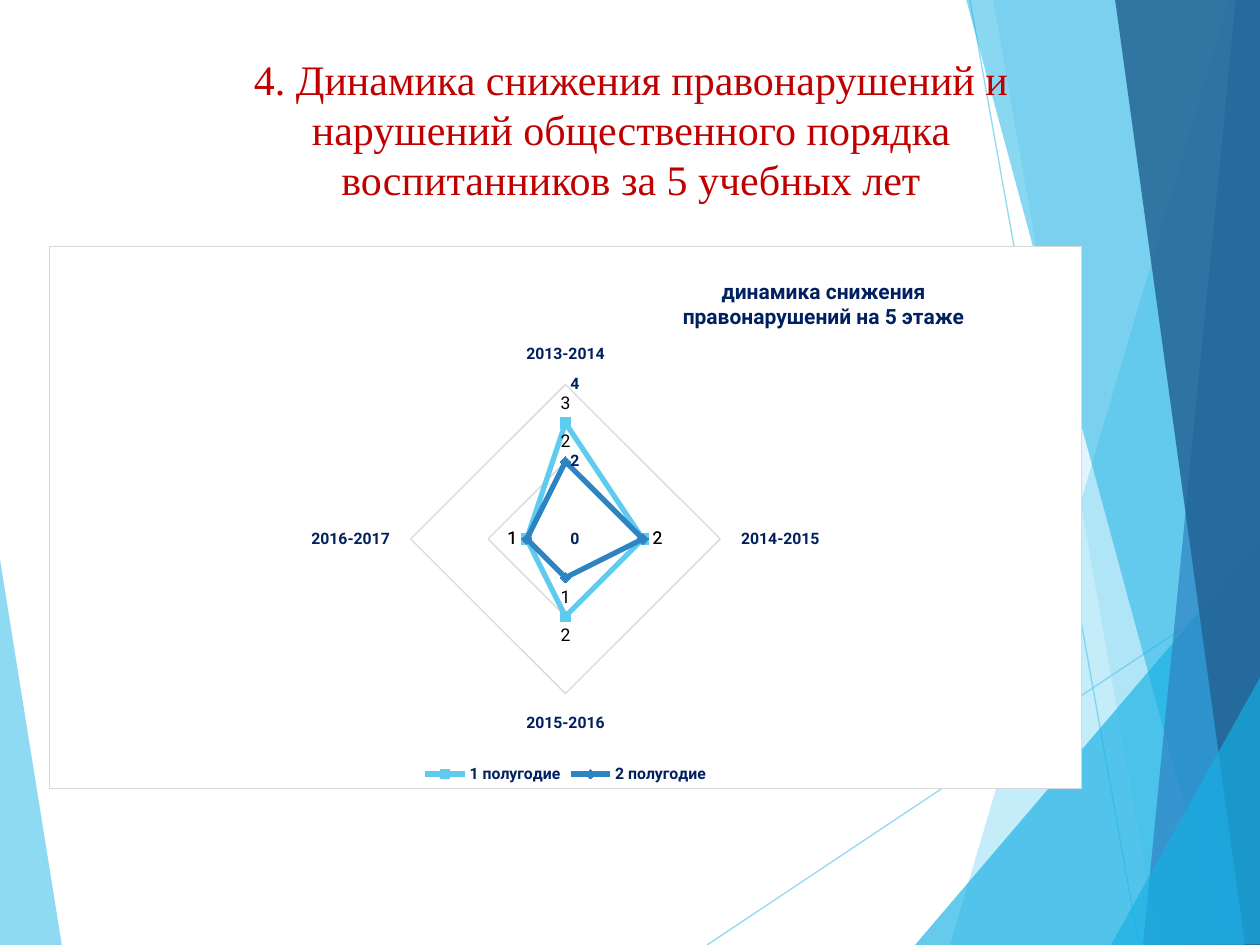
from pptx import Presentation, util as u
from pptx.chart.data import CategoryChartData
from pptx.dml.color import RGBColor
from pptx.enum import chart as ch, shapes, text
from pptx.oxml import parse_xml
from pptx.oxml.ns import nsdecls, qn
from lxml import etree

PX = u.Inches(1) / 126
THEME = dict(
    sky="5FCBEF", cyan="17B0E4", blue="2E83C3", deep="226292",
    red="C00000", navy="002060", black="000000", grid="D9D9D9",
    title_font="Times New Roman", chart_font="Roboto",
    title=24, chart_title=12, label=10, axis=9,
)


def set_font(font, face, size, color, bold=False):
    font.name, font.size, font.bold = face, u.Pt(THEME[size]), bold
    font.color.rgb = RGBColor.from_string(THEME[color])


def set_alpha(sp, percent):
    for clr in sp._element.spPr.iter(qn("a:srgbClr")):
        etree.SubElement(clr, qn("a:alpha")).set("val", str(percent * 1000))


prs = Presentation()
prs.slide_width, prs.slide_height = u.Inches(10), u.Inches(7.5)
s = prs.slides.add_slide(prs.slide_layouts[5])

# Background facets and hairlines, from back to front: colour, opacity, points
facets = [
    ("sky", 70, [(-1, 553), (62, 946), (-1, 945)]),
    ("sky", 70, [(707, 945), (1261, 576)]),
    ("sky", 70, [(970, 0), (1139, 945)]),
    ("sky", 36, [(1229, 0), (950, 945), (1262, 946), (1261, 1)]),
    ("sky", 20, [(993, -1), (1158, 945), (1261, 945), (1261, -1)]),
    ("cyan", 66, [(915, 945), (1260, 541), (1261, 945)]),
    ("cyan", 50, [(966, -1), (1222, 945), (1261, 944), (1261, -1)]),
    ("blue", 70, [(1236, -1), (1143, 945), (1261, 945), (1260, -1)]),
    ("deep", 82, [(1115, -1), (1245, 945), (1262, 945), (1260, -1)]),
    ("cyan", 66, [(1111, 945), (1262, 674), (1262, 944)]),
]
for color, opacity, points in facets:
    rgb = RGBColor.from_string(THEME[color])
    if len(points) == 2:
        ends = [round(v * PX) for point in points for v in point]
        sp = s.shapes.add_connector(shapes.MSO_CONNECTOR.STRAIGHT, *ends)
        sp.line.color.rgb, sp.line.width = rgb, u.Pt(0.75)
        etree.SubElement(sp._element.spPr, qn("a:effectLst"))
    else:
        fb = s.shapes.build_freeform(*points[0], scale=PX)
        fb.add_line_segments(points[1:], close=True)
        sp = fb.convert_to_shape()
        sp.fill.solid()
        sp.fill.fore_color.rgb = rgb
        sp.line.fill.background()
        sp.shadow.inherit = False
    set_alpha(sp, opacity)

# Slide title, in front of the facets
title = s.shapes.title
s.shapes._spTree.append(title._element)
title.left, title.top, title.width, title.height = (
    round(v * PX) for v in (194, 45, 874, 182))
tf = title.text_frame
tf.word_wrap = True
tf.auto_size = text.MSO_AUTO_SIZE.NONE
tf.vertical_anchor = text.MSO_ANCHOR.TOP
tf.margin_top = round(9 * PX)
p = tf.paragraphs[0]
p.text = ("4. Динамика снижения правонарушений и нарушений общественного "
          "порядка воспитанников за 5 учебных лет")
p.alignment = text.PP_ALIGN.CENTER
p.line_spacing = u.Pt(28.5)
set_font(p.font, THEME["title_font"], "title", "red")

# Radar chart
face = THEME["chart_font"]
grid_rgb = RGBColor.from_string(THEME["grid"])
data = CategoryChartData()
data.categories = ["2013-2014", "2014-2015", "2015-2016", "2016-2017"]
data.add_series("1 полугодие", [3, 2, 2, 1])
data.add_series("2 полугодие", [2, 2, 1, 1])
frame = s.shapes.add_chart(
    ch.XL_CHART_TYPE.RADAR_MARKERS,
    *(round(v * PX) for v in (49, 246, 1033, 543)), data)
chart = frame.chart
set_font(chart.font, face, "label", "black")

# Series and value labels
styles = [("sky", ch.XL_MARKER_STYLE.SQUARE), ("blue", ch.XL_MARKER_STYLE.DIAMOND)]
for series, (color, marker) in zip(chart.plots[0].series, styles):
    rgb = RGBColor.from_string(THEME[color])
    series.smooth = False
    series.format.line.color.rgb, series.format.line.width = rgb, u.Pt(3)
    series.marker.style, series.marker.size = marker, 6
    series.marker.format.fill.solid()
    series.marker.format.fill.fore_color.rgb = rgb
    series.marker.format.line.color.rgb = rgb
    series.data_labels.show_value = True
    set_font(series.data_labels.font, face, "label", "black")

# Axes and legend
cat, val = chart.category_axis, chart.value_axis
for axis in (cat, val):
    axis.major_tick_mark = axis.minor_tick_mark = ch.XL_TICK_MARK.NONE
    axis.has_major_gridlines = True
    for line in (axis.format.line, axis.major_gridlines.format.line):
        line.color.rgb, line.width = grid_rgb, u.Pt(0.75)
    set_font(axis.tick_labels.font, face, "axis", "navy", True)
val.format.line.fill.background()
val.minimum_scale, val.maximum_scale, val.major_unit = 0, 4, 2
chart.has_legend = True
chart.legend.position = ch.XL_LEGEND_POSITION.BOTTOM
chart.legend.include_in_layout = False
set_font(chart.legend.font, face, "axis", "navy", True)

# Chart title
chart.has_title = True
tf = chart.chart_title.text_frame
tf.text = "динамика снижения\nправонарушений на 5 этаже"
for p in tf.paragraphs:
    p.alignment = text.PP_ALIGN.CENTER
    set_font(p.font, face, "chart_title", "navy", True)

# Fixed places for the chart title and the plot, as shares of the chart
plot_area = chart._chartSpace.chart.plotArea
layouts = [
    (chart.chart_title._element, 1, dict(x=0.61, y=0.05)),
    (plot_area, 0, dict(x=0.35, y=0.25, w=0.3, h=0.58)),
]
for parent, index, shares in layouts:
    for old in parent.findall(qn("c:layout")):
        parent.remove(old)
    target = '<c:layoutTarget val="inner"/>' if "w" in shares else ""
    modes = "".join(f'<c:{k}Mode val="edge"/>' for k in "xy")
    values = "".join(f'<c:{k} val="{v}"/>' for k, v in shares.items())
    parent.insert(index, parse_xml(
        f'<c:layout {nsdecls("c")}><c:manualLayout>{target}{modes}{values}'
        '</c:manualLayout></c:layout>'))

# White chart background with a thin border
chart._chartSpace.chart.addnext(parse_xml(
    f'<c:spPr {nsdecls("c", "a")}>'
    '<a:solidFill><a:srgbClr val="FFFFFF"/></a:solidFill>'
    f'<a:ln w="9525"><a:solidFill><a:srgbClr val="{THEME["grid"]}"/></a:solidFill></a:ln>'
    '</c:spPr>'))

prs.save("out.pptx")
